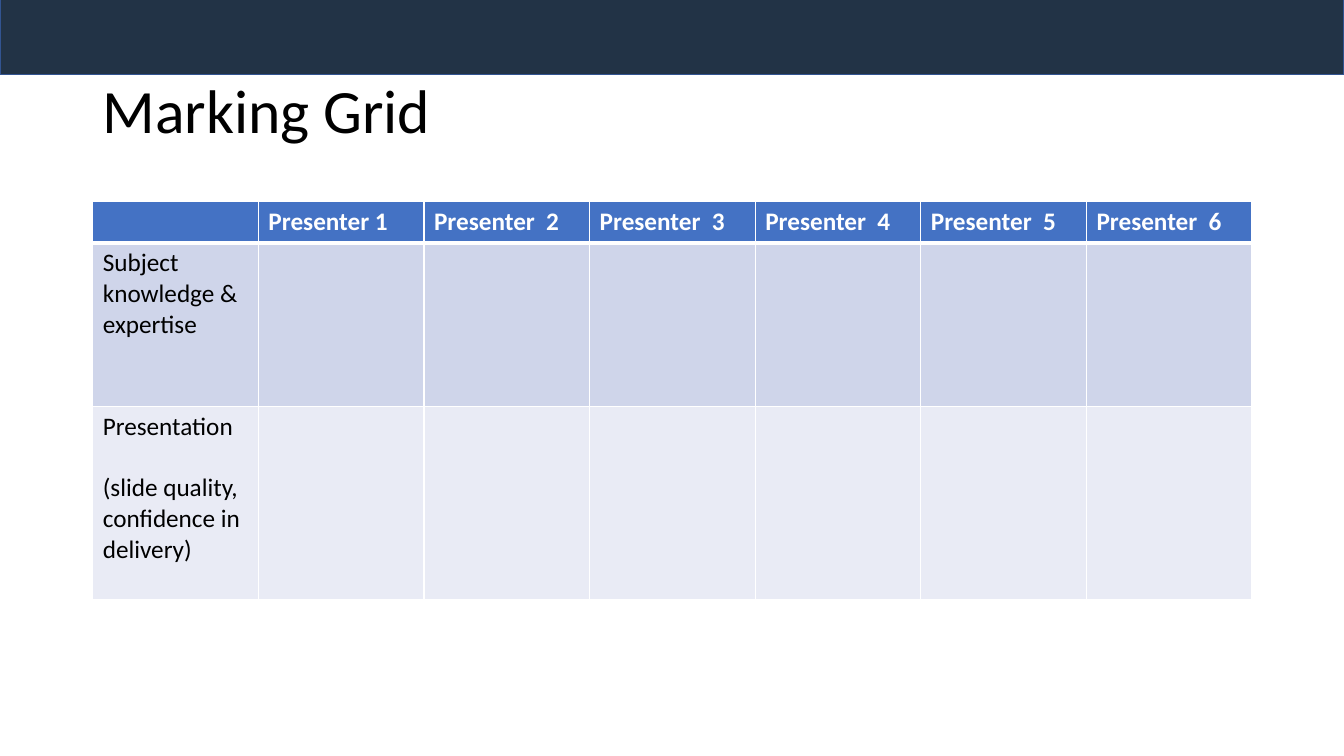
from lxml import etree
from pptx import Presentation
from pptx.dml.color import RGBColor
from pptx.enum.shapes import MSO_SHAPE
from pptx.enum.text import MSO_ANCHOR
from pptx.oxml.ns import qn
from pptx.util import Inches, Pt

RECT = MSO_SHAPE.RECTANGLE
MIDDLE = MSO_ANCHOR.MIDDLE
FONT = "Calibri"
COLORS = {
    "band": "223346",
    "edge": "325491",
    "head": "4472C4",
    "odd": "CFD5EA",
    "even": "E9EBF5",
    "white": "FFFFFF",
    "black": "000000",
}
COLS = 7
ROWS = [
    ("head", 0.41, [[]] + [["Presenter 1"]] + [[f"Presenter  {n}"] for n in range(2, COLS)]),
    ("odd", 1.62, [["Subject knowledge & expertise"]]),
    ("even", 1.92, [["Presentation", "(slide quality, confidence in delivery)"]]),
]


def rgb(name):
    return RGBColor.from_string(COLORS[name])


def write(frame, lines, size=18, color="black", bold=False, gap=0, spacing=1.0):
    for i, line in enumerate(lines):
        para = frame.paragraphs[0] if i == 0 else frame.add_paragraph()
        para.line_spacing = spacing
        if i:
            para.space_before = Pt(gap)
        run = para.add_run()
        run.text = line
        font = run.font
        font.name, font.size, font.bold = FONT, Pt(size), bold
        font.color.rgb = rgb(color)


def add_band(slide):
    band = slide.shapes.add_shape(RECT, 0, Inches(-0.04), Inches(13.33), Inches(0.78))
    band.shadow.inherit = False
    band.fill.solid()
    band.fill.fore_color.rgb = rgb("band")
    band.line.color.rgb = rgb("edge")
    band.line.width = Pt(1)


def add_title(slide, text):
    box = slide.shapes.add_textbox(Inches(0.92), Inches(0.4), Inches(11.5), Inches(1.45))
    frame = box.text_frame
    frame.word_wrap = True
    frame.vertical_anchor = MIDDLE
    write(frame, [text], size=44, spacing=0.9)


def set_edges(cell, top, bottom):
    props = cell._tc.get_or_add_tcPr()
    widths = {"lnL": 1, "lnR": 1, "lnT": top, "lnB": bottom}
    for i, (tag, width) in enumerate(widths.items()):
        line = etree.Element(qn(f"a:{tag}"), w=str(Pt(width)))
        fill = etree.SubElement(line, qn("a:solidFill"))
        etree.SubElement(fill, qn("a:srgbClr"), val=COLORS["white"])
        props.insert(i, line)


def add_grid(slide):
    height = sum(row[1] for row in ROWS)
    frame = slide.shapes.add_table(
        len(ROWS), COLS, Inches(0.92), Inches(2), Inches(11.5), Inches(height))
    table = frame.table
    for r, (fill, tall, texts) in enumerate(ROWS):
        table.rows[r].height = Inches(tall)
        head = r == 0
        for c in range(COLS):
            cell = table.cell(r, c)
            cell.fill.solid()
            cell.fill.fore_color.rgb = rgb(fill)
            set_edges(cell, 3 if r == 1 else 1, 3 if head else 1)
            if c < len(texts):
                write(cell.text_frame, texts[c], color="white" if head else "black",
                      bold=head, gap=22)


def main():
    """Build the marking grid slide."""
    deck = Presentation()
    deck.slide_width, deck.slide_height = Inches(13.33), Inches(7.5)
    slide = deck.slides.add_slide(deck.slide_layouts[6])
    add_band(slide)
    add_title(slide, "Marking Grid")
    add_grid(slide)
    deck.save("out.pptx")


if __name__ == "__main__":
    main()
